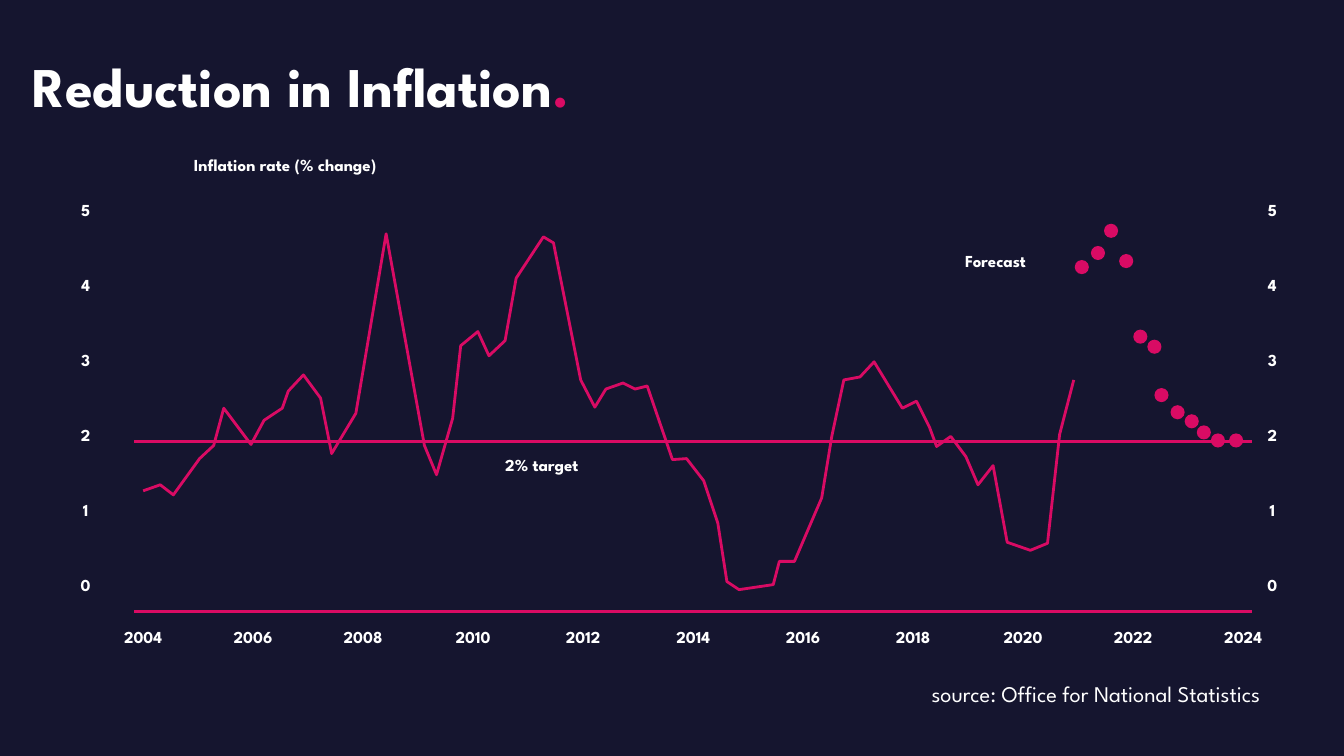
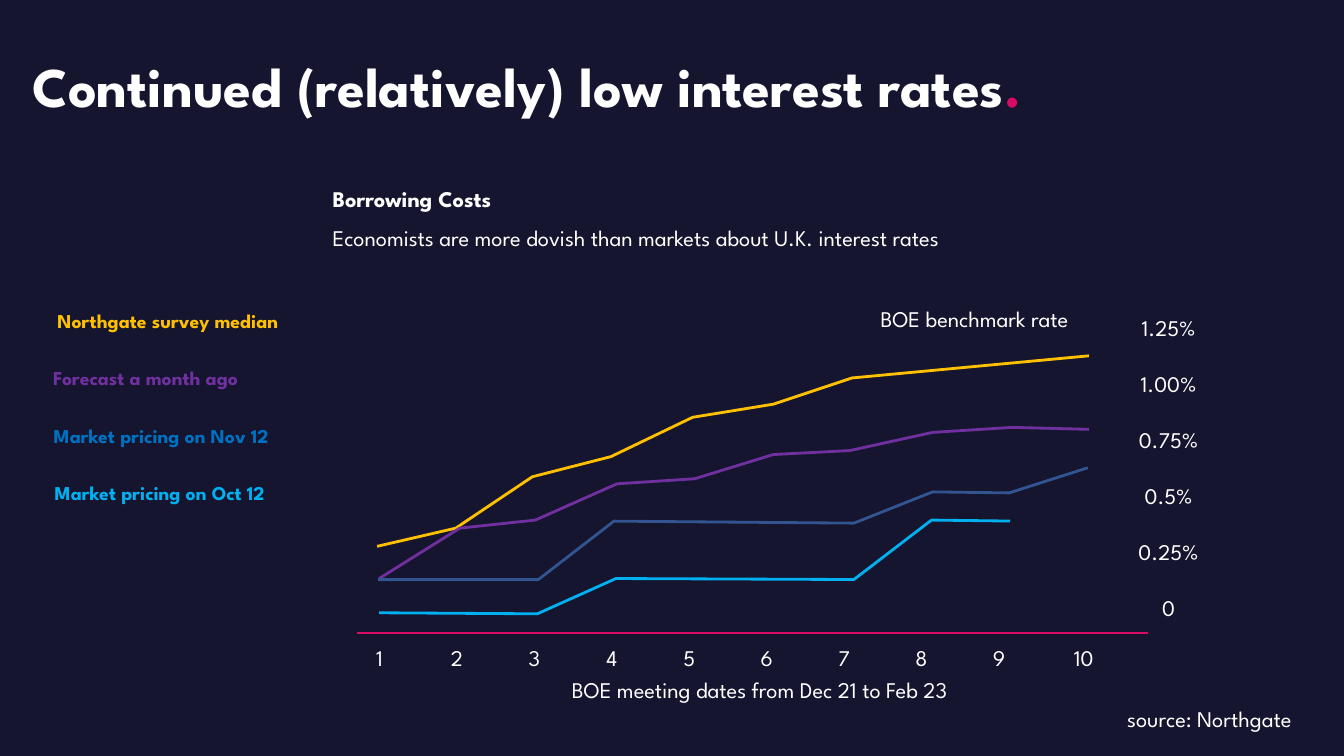
from pptx import Presentation
from pptx.dml.color import RGBColor
from pptx.enum import shapes, text
from pptx.oxml.ns import qn
from pptx.util import Inches, Pt
from lxml import etree

FONT = "League Spartan"
NAVY = RGBColor(0x15, 0x15, 0x2F)
WHITE = RGBColor(0xFF, 0xFF, 0xFF)
PINK = RGBColor(0xD9, 0x0B, 0x64)
GOLD = RGBColor(0xFF, 0xC0, 0x00)
PURPLE = RGBColor(0x70, 0x30, 0xA0)
BLUE = RGBColor(0x00, 0x70, 0xC0)
STEEL = RGBColor(0x32, 0x54, 0x91)
CYAN = RGBColor(0x00, 0xB0, 0xF0)

INFLATION_TITLE = "Reduction in Inflation"
INFLATION_SOURCE = ("source: Office for National Statistics", 8.86, 6.7, 4.02)
INFLATION_RATES = ["5", "4", "3", "2", "1", "0"]
INFLATION_YEARS = [str(year) for year in range(2004, 2025, 2)]
INFLATION_LABELS = [
    ("Inflation rate (% change)", 1.33, 1.49, 3),
    ("Forecast", 9.27, 2.44, 1.21),
    ("2% target", 4.72, 4.46, 1.31),
]
INFLATION_RULES = [6.07, 4.38]
INFLATION_LINE = [
    (1.42, 4.87), (1.59, 4.81), (1.72, 4.91), (1.98, 4.55), (2.12, 4.42),
    (2.22, 4.05), (2.49, 4.41), (2.62, 4.17), (2.8, 4.05), (2.86, 3.88),
    (3.01, 3.72), (3.18, 3.95), (3.29, 4.5), (3.53, 4.1), (3.83, 2.32),
    (4.21, 4.42), (4.33, 4.71), (4.49, 4.15), (4.57, 3.43), (4.74, 3.29),
    (4.85, 3.53), (5.01, 3.38), (5.12, 2.76), (5.39, 2.35), (5.49, 2.41),
    (5.76, 3.77), (5.9, 4.04), (6.01, 3.86), (6.18, 3.8), (6.3, 3.86),
    (6.42, 3.83), (6.67, 4.56), (6.81, 4.55), (6.98, 4.77), (7.12, 5.19),
    (7.21, 5.77), (7.33, 5.85), (7.67, 5.8), (7.73, 5.57), (7.88, 5.57),
    (8.15, 4.94), (8.25, 4.33), (8.37, 3.77), (8.53, 3.74), (8.67, 3.59),
    (8.95, 4.05), (9.09, 3.98), (9.22, 4.24), (9.29, 4.43), (9.43, 4.33),
    (9.58, 4.53), (9.7, 4.81), (9.85, 4.62), (9.99, 5.38), (10.22, 5.46),
    (10.39, 5.39), (10.51, 4.31), (10.65, 3.77),
]
FORECAST_DOTS = [
    (10.66, 2.58), (10.82, 2.44), (10.95, 2.22), (11.1, 2.52),
    (11.24, 3.27), (11.38, 3.37), (11.45, 3.85), (11.61, 4.02),
    (11.75, 4.11), (11.87, 4.22), (12.01, 4.3), (12.19, 4.3),
]
DOT_SIZE = 0.14

INTEREST_TITLE = "Continued (relatively) low interest rates"
INTEREST_SOURCE = ("source: Northgate", 10.87, 6.95, 2.25)
INTEREST_HEADING = "Borrowing Costs"
INTEREST_SUBHEADING = "Economists are more dovish than markets about U.K. interest rates"
INTEREST_LABELS = [
    ("BOE benchmark rate", 8.14, 2.98, 3.05),
    ("BOE meeting dates from Dec 21 to Feb 23", 4.68, 6.66, 5.71),
]
INTEREST_RATES = ["1.25%", "1.00%", "0.75%", "0.5%", "0.25%", "0"]
MEETINGS = [str(number) for number in range(1, 11)]
LEGEND = [
    ("Northgate survey median", GOLD, 0.22, 2.89),
    ("Forecast a month ago", PURPLE, 0.24, 2.41),
    ("Market pricing on Nov 12", BLUE, 0.2, 2.8),
    ("Market pricing on Oct 12", CYAN, 0.21, 2.75),
]
RATE_LINES = [
    (GOLD, [(3.74, 5.42), (4.52, 5.24), (5.28, 4.73), (6.06, 4.53),
            (6.87, 4.14), (7.67, 4.01), (8.45, 3.75), (10.8, 3.53)]),
    (PURPLE, [(3.76, 5.74), (4.56, 5.24), (5.31, 5.16), (6.12, 4.8),
              (6.89, 4.75), (7.67, 4.51), (8.43, 4.47), (9.25, 4.29),
              (10.04, 4.24), (10.8, 4.26)]),
    (STEEL, [(3.75, 5.75), (5.34, 5.75), (6.09, 5.17), (8.47, 5.19),
             (9.25, 4.88), (10.01, 4.89), (10.79, 4.64)]),
    (CYAN, [(3.76, 6.08), (5.33, 6.09), (6.11, 5.74), (8.47, 5.75),
            (9.24, 5.16), (10.02, 5.17)]),
]


def spread(items, first, last):
    step = (last - first) / (len(items) - 1)
    return [(item, first + index * step) for index, item in enumerate(items)]


def add_text(slide, content, left, top, width, height=0.4, size=16, bold=False,
             color=WHITE, align=text.PP_ALIGN.CENTER,
             anchor=text.MSO_ANCHOR.TOP, accent=""):
    box = slide.shapes.add_textbox(
        Inches(left), Inches(top), Inches(width), Inches(height))
    frame = box.text_frame
    frame.word_wrap = True
    frame.vertical_anchor = anchor
    paragraph = frame.paragraphs[0]
    paragraph.alignment = align
    for words, fill in ((content, color), (accent, PINK)):
        if words:
            run = paragraph.add_run()
            run.text = words
            run.font.name = FONT
            run.font.size = Pt(size)
            run.font.bold = bold
            run.font.color.rgb = fill


def add_rule(slide, left, right, top):
    rule = slide.shapes.add_connector(
        shapes.MSO_CONNECTOR.STRAIGHT,
        Inches(left), Inches(top), Inches(right), Inches(top))
    rule.line.color.rgb = PINK
    rule.line.width = Pt(2)
    properties = rule._element.find(qn("p:spPr"))
    etree.SubElement(properties, qn("a:effectLst"))


def add_curve(slide, points, color):
    start, *rest = [(Inches(x), Inches(y)) for x, y in points]
    builder = slide.shapes.build_freeform(*start)
    builder.add_line_segments(rest, close=False)
    curve = builder.convert_to_shape()
    curve.shadow.inherit = False
    curve.fill.background()
    curve.line.color.rgb = color
    curve.line.width = Pt(2)


def add_dot(slide, left, top):
    dot = slide.shapes.add_shape(
        shapes.MSO_SHAPE.OVAL, Inches(left), Inches(top),
        Inches(DOT_SIZE), Inches(DOT_SIZE))
    dot.shadow.inherit = False
    dot.fill.solid()
    dot.fill.fore_color.rgb = PINK
    dot.line.fill.background()


def add_titled_slide(presentation, title, source):
    slide = presentation.slides.add_slide(presentation.slide_layouts[6])
    add_text(slide, title, 0.22, 0.46, 12.5, 0.77, size=40, bold=True,
             align=text.PP_ALIGN.LEFT, accent=".")
    add_text(slide, *source)
    return slide


def build_inflation(presentation):
    slide = add_titled_slide(presentation, INFLATION_TITLE, INFLATION_SOURCE)
    add_curve(slide, INFLATION_LINE, PINK)
    for rate, top in spread(INFLATION_RATES, 1.93, 5.65):
        for left in (0.65, 12.42):
            add_text(slide, rate, left, top, 0.4, size=12, bold=True)
    for year, left in spread(INFLATION_YEARS, 1.03, 11.94):
        add_text(slide, year, left, 6.17, 0.78, size=12, bold=True)
    for label in INFLATION_LABELS:
        add_text(slide, *label, size=12, bold=True)
    for top in INFLATION_RULES:
        add_rule(slide, 1.33, 12.42, top)
    for left, top in FORECAST_DOTS:
        add_dot(slide, left, top)


def build_interest(presentation):
    slide = add_titled_slide(presentation, INTEREST_TITLE, INTEREST_SOURCE)
    for (label, color, left, width), top in spread(LEGEND, 2.98, 4.69):
        add_text(slide, label, left, top, width, size=14, bold=True,
                 color=color, anchor=text.MSO_ANCHOR.MIDDLE)
    add_rule(slide, 3.54, 11.39, 6.28)
    for color, points in RATE_LINES:
        add_curve(slide, points, color)
    add_text(slide, INTEREST_HEADING, 3.2, 1.79, 7.38, bold=True,
             align=text.PP_ALIGN.LEFT)
    add_text(slide, INTEREST_SUBHEADING, 3.2, 2.17, 7.38,
             align=text.PP_ALIGN.LEFT)
    for label in INTEREST_LABELS:
        add_text(slide, *label)
    for rate, top in spread(INTEREST_RATES, 3.07, 5.85):
        add_text(slide, rate, 11.1, top, 0.98)
    for meeting, left in spread(MEETINGS, 3.57, 10.48):
        add_text(slide, meeting, left, 6.34, 0.24 + 0.15 * len(meeting))


def main():
    presentation = Presentation()
    presentation.slide_width = Inches(13.33)
    presentation.slide_height = Inches(7.5)
    background = presentation.slide_master.background.fill
    background.solid()
    background.fore_color.rgb = NAVY
    build_inflation(presentation)
    build_interest(presentation)
    presentation.save("out.pptx")


if __name__ == "__main__":
    main()
